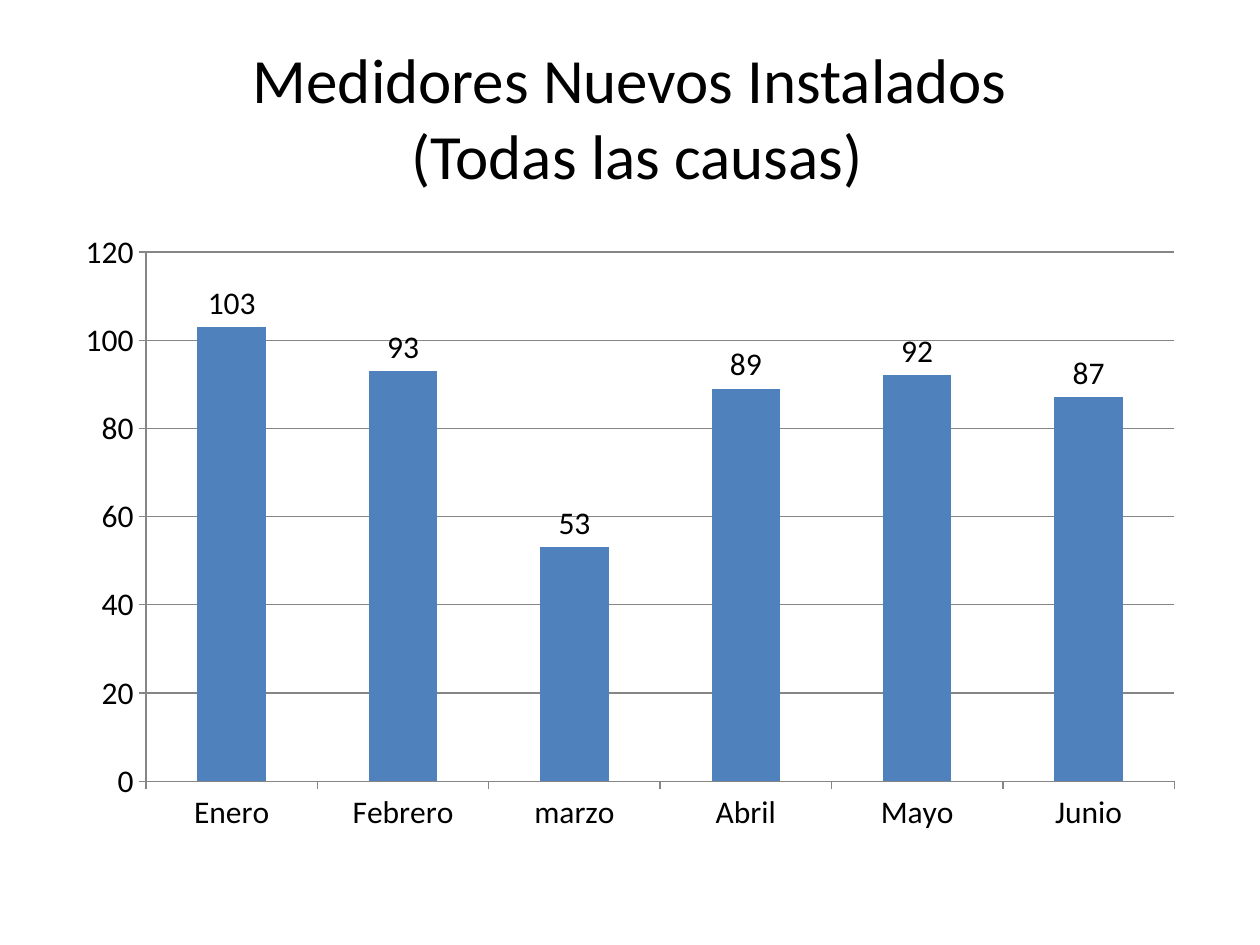
from pptx import Presentation
from pptx.chart.data import CategoryChartData
from pptx.dml.color import RGBColor
from pptx.enum.chart import XL_CHART_TYPE, XL_LABEL_POSITION, XL_TICK_MARK
from pptx.enum.text import MSO_ANCHOR, PP_ALIGN
from pptx.util import Inches, Pt

COLUMN_CLUSTERED = XL_CHART_TYPE.COLUMN_CLUSTERED
OUTSIDE_END = XL_LABEL_POSITION.OUTSIDE_END
TICK_OUTSIDE = XL_TICK_MARK.OUTSIDE
TICK_NONE = XL_TICK_MARK.NONE
MIDDLE = MSO_ANCHOR.MIDDLE
CENTER = PP_ALIGN.CENTER

FONT = "Calibri"
BLACK = RGBColor(0x00, 0x00, 0x00)
BLUE = RGBColor(0x4F, 0x81, 0xBD)
GRAY = RGBColor(0x86, 0x86, 0x86)

METERS_BY_MONTH = {
    "Enero": 103,
    "Febrero": 93,
    "marzo": 53,
    "Abril": 89,
    "Mayo": 92,
    "Junio": 87,
}


def style_font(font, size):
    font.name = FONT
    font.size = Pt(size)
    font.color.rgb = BLACK


def style_line(line):
    line.color.rgb = GRAY
    line.width = Pt(0.75)


def add_title(page, left, top, width, height):
    box = page.shapes.add_textbox(left, top, width, height)
    frame = box.text_frame
    frame.word_wrap = True
    frame.vertical_anchor = MIDDLE
    para = frame.paragraphs[0]
    para.alignment = CENTER
    lines = ["Medidores Nuevos Instalados", " (Todas las causas)"]
    for index, text in enumerate(lines):
        if index:
            para.add_line_break()
        span = para.add_run()
        span.text = text
        style_font(span.font, 36)


def add_meter_chart(page, left, top, width, height):
    data = CategoryChartData()
    data.categories = list(METERS_BY_MONTH)
    data.add_series("Series 1", list(METERS_BY_MONTH.values()))
    chart = page.shapes.add_chart(
        COLUMN_CLUSTERED, left, top, width, height, data
    ).chart
    chart.has_title = False
    chart.has_legend = False
    style_font(chart.font, 18)

    for axis in (chart.category_axis, chart.value_axis):
        axis.major_tick_mark = TICK_OUTSIDE
        axis.minor_tick_mark = TICK_NONE
        style_line(axis.format.line)
    chart.category_axis.has_major_gridlines = False

    values = chart.value_axis
    values.minimum_scale = 0
    values.maximum_scale = 120
    values.major_unit = 20
    values.has_major_gridlines = True
    style_line(values.major_gridlines.format.line)

    plot = chart.plots[0]
    plot.gap_width = 150
    plot.vary_by_categories = False
    fill = plot.series[0].format.fill
    fill.solid()
    fill.fore_color.rgb = BLUE

    plot.has_data_labels = True
    labels = plot.data_labels
    labels.show_value = True
    labels.position = OUTSIDE_END
    style_font(labels.font, 18)


def main():
    deck = Presentation()
    deck.slide_width = Inches(10)
    deck.slide_height = Inches(7.5)
    page = deck.slides.add_slide(deck.slide_layouts[6])
    left, width = Inches(0.5), Inches(9)
    add_title(page, left, Inches(0.3), width, Inches(1.25))
    add_meter_chart(page, left, Inches(1.75), width, Inches(4.95))
    deck.save("out.pptx")


if __name__ == "__main__":
    main()
